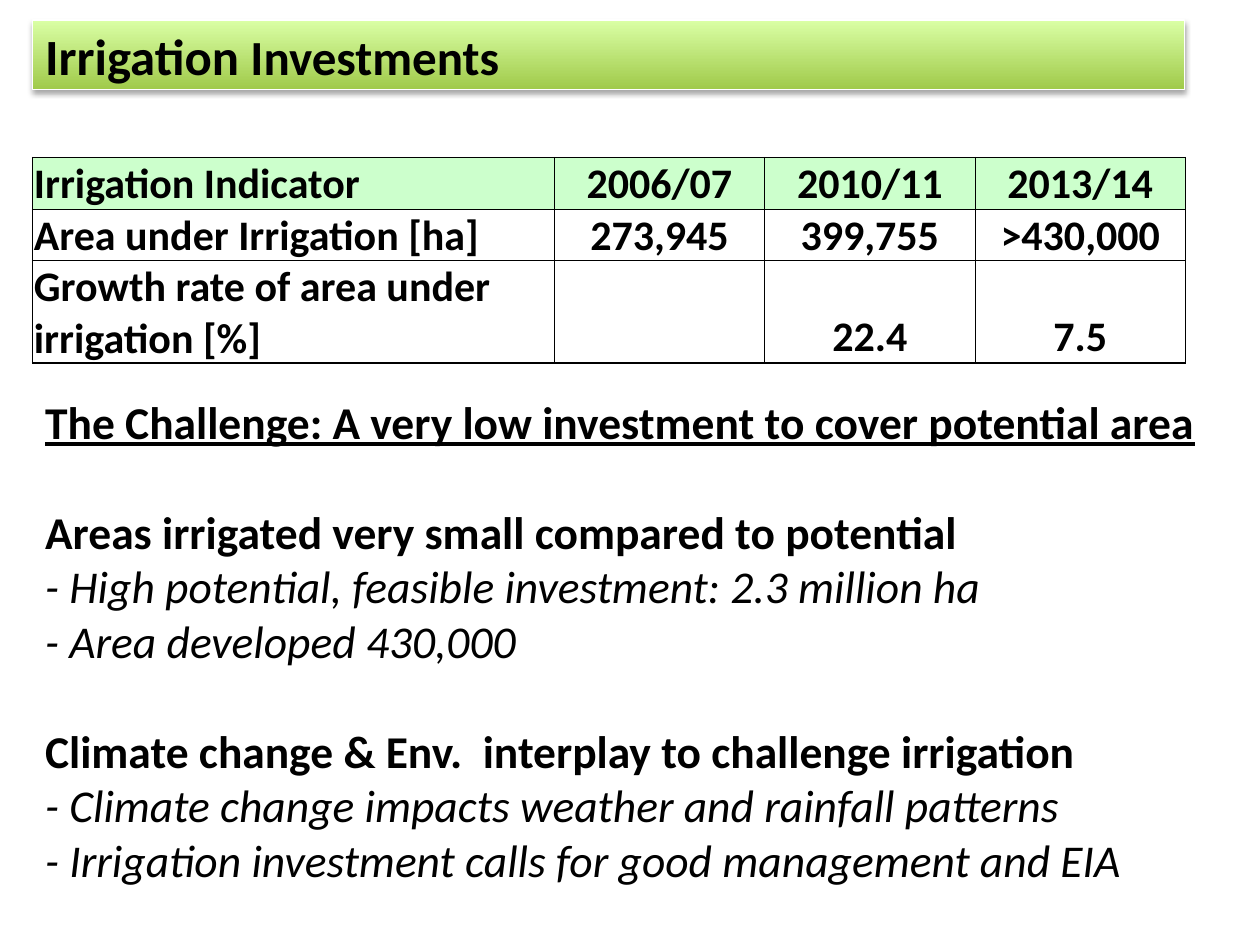
from lxml.etree import SubElement as Sub
from pptx import Presentation
from pptx.dml.color import RGBColor
from pptx.enum.shapes import MSO_SHAPE as Kind
from pptx.enum.text import MSO_ANCHOR as Anchor, PP_ALIGN as Align
from pptx.oxml import parse_xml
from pptx.oxml.ns import nsdecls, qn
from pptx.util import Inches, Pt

LEFT, WIDE = 0.26, 9.14
TITLE = [("Irrigation", 29), (" Investments", 28)]
ROWS = [
    ("Irrigation Indicator", "2006/07", "2010/11", "2013/14"),
    ("Area under Irrigation [ha]", "273,945", "399,755", ">430,000"),
    ("Growth rate of area under irrigation [%]", "", "22.4", "7.5"),
]
COLS = [4.14, 1.67, 1.67, 1.67]
HIGH = [0.39, 0.35, 0.71]
HEAD = {"bold": True, "before": 31.5}
ITEM = {"italic": True}
BODY = [
    ("The Challenge: A very low investment to cover potential area",
     {"bold": True, "underline": True}),
    ("Areas irrigated very small compared to potential", HEAD),
    ("- High potential, feasible investment: 2.3 million ha", ITEM),
    ("- Area developed 430,000", ITEM),
    ("Climate change & Env.  interplay to challenge irrigation", HEAD),
    ("- Climate change impacts weather and rainfall patterns", ITEM),
    ("- Irrigation investment calls for good management and EIA", ITEM),
]


def paint(color, code):
    color.rgb = RGBColor.from_string(code)


def write(para, text, size=26, bold=False, italic=False, underline=False,
          align=Align.LEFT, before=0):
    para.alignment = align
    para.space_before = Pt(before)
    run = para.add_run()
    run.text = text
    font = run.font
    font.name, font.size = "Calibri", Pt(size)
    font.bold, font.italic, font.underline = bold, italic, underline
    paint(font.color, "000000")


def border(cell, widths):
    props = cell._tc.get_or_add_tcPr()
    for spot, (side, width) in enumerate(widths.items()):
        line = parse_xml(f'<a:ln{side} {nsdecls("a")} w="{Pt(width)}"/>')
        fill = Sub(line, qn("a:solidFill"))
        Sub(fill, qn("a:srgbClr"), val="000000")
        props.insert(spot, line)


def add_title(slide):
    bar = slide.shapes.add_shape(Kind.RECTANGLE, Inches(LEFT), Inches(0.16),
                                 Inches(WIDE), Inches(0.55))
    bar.fill.gradient()
    bar.fill.gradient_angle = 90
    for stop, code in zip(bar.fill.gradient_stops, ("A0CA4A", "DAFFA5")):
        paint(stop.color, code)
    paint(bar.line.color, "FFFFFF")
    bar.line.width = Pt(0.75)
    bar.shadow.inherit = False
    glow = Sub(bar._element.spPr.find(qn("a:effectLst")), qn("a:outerShdw"),
               blurRad=str(Pt(3.1)), dist=str(Pt(1.8)), dir="5400000",
               rotWithShape="0")
    tint = Sub(glow, qn("a:srgbClr"), val="000000")
    Sub(tint, qn("a:alpha"), val="35000")
    frame = bar.text_frame
    frame.vertical_anchor = Anchor.MIDDLE
    for text, size in TITLE:
        write(frame.paragraphs[0], text, size=size, bold=True)


def add_grid(slide):
    grid = slide.shapes.add_table(len(ROWS), len(COLS), Inches(LEFT),
                                  Inches(1.25), Inches(WIDE),
                                  Inches(sum(HIGH))).table
    for col, width in zip(grid.columns, COLS):
        col.width = Inches(width)
    for row, high in zip(grid.rows, HIGH):
        row.height = Inches(high)
    for r, row in enumerate(ROWS):
        for c, text in enumerate(row):
            cell = grid.cell(r, c)
            cell.fill.solid()
            paint(cell.fill.fore_color, "FFFFFF" if r else "CCFFCC")
            cell.vertical_anchor = Anchor.BOTTOM
            cell.margin_left = cell.margin_right = Inches(0.01)
            cell.margin_top, cell.margin_bottom = Inches(0.01), 0
            if text:
                write(cell.text_frame.paragraphs[0], text, size=24, bold=True,
                      align=Align.CENTER if c else Align.LEFT)
            border(cell, {"L": 0.5 if c else 1,
                          "R": 1 if c == len(COLS) - 1 else 0.5,
                          "T": 0.5 if r else 1,
                          "B": 1 if r == len(ROWS) - 1 else 0.5})


def add_body(slide):
    frame = slide.shapes.add_textbox(Inches(LEFT), Inches(3.08), Inches(9.52),
                                     Inches(4.04)).text_frame
    frame.word_wrap = True
    for spot, (text, style) in enumerate(BODY):
        para = frame.add_paragraph() if spot else frame.paragraphs[0]
        write(para, text, **style)


def main():
    deck = Presentation()
    deck.slide_width, deck.slide_height = Inches(10), Inches(7.5)
    slide = deck.slides.add_slide(deck.slide_layouts[6])
    add_title(slide)
    add_body(slide)
    add_grid(slide)
    deck.save("out.pptx")


if __name__ == "__main__":
    main()
